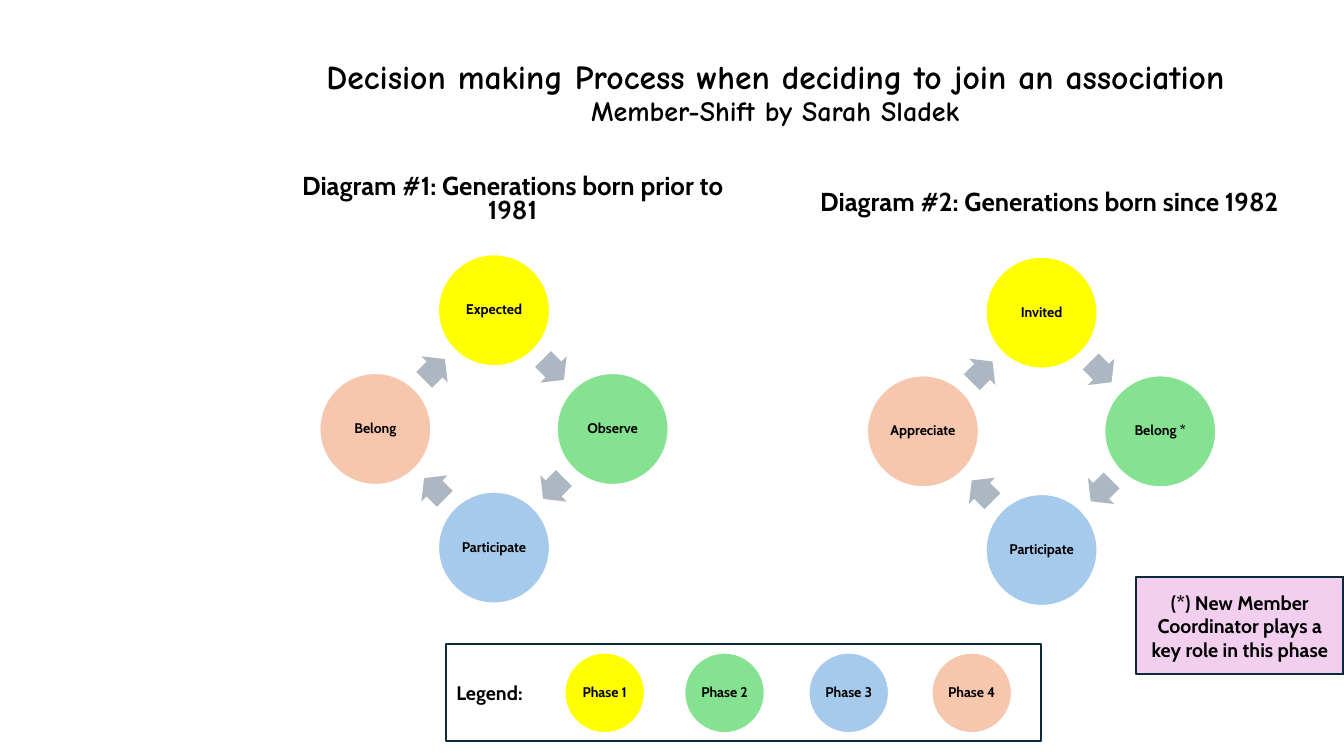
"""Build the slide comparing how two generations decide to join an association."""
import dataclasses
import math

import pptx
import pptx.dml.color
import pptx.enum.shapes
import pptx.enum.text
import pptx.util

Cm = pptx.util.Cm
Pt = pptx.util.Pt
SHAPE = pptx.enum.shapes.MSO_SHAPE
ALIGN = pptx.enum.text.PP_ALIGN
MIDDLE = pptx.enum.text.MSO_ANCHOR.MIDDLE
NO_FIT = pptx.enum.text.MSO_AUTO_SIZE.NONE


@dataclasses.dataclass(frozen=True)
class Theme:
    """Colours, fonts and type sizes of the slide."""
    title_font: str = "Comic Neue"
    body_font: str = "Cabin"
    title: float = 24
    subtitle: float = 20
    heading: float = 18.5
    note: float = 14
    label: float = 10
    outline: float = 1.5
    ink: str = "000000"
    paper: str = "FFFFFF"
    border: str = "092A39"
    arrow: str = "ACB7C1"
    pink: str = "F2CFEE"
    phases: tuple = ("FFFF00", "84E291", "A6CAEC", "F6C6AD")


def rgb(code):
    """Return the colour for a hex code."""
    return pptx.dml.color.RGBColor.from_string(code)


def assign(target, values):
    """Set every attribute in a dict of format values."""
    for name, value in values.items():
        setattr(target, name, value)


class Deck:
    """Hold the theme and current slide and draw elements on it."""

    def __init__(self, s, theme):
        """Keep the slide and the theme."""
        self.s = s
        self.theme = theme

    def text(self, sp, lines, font, inset=None, align=ALIGN.CENTER, spacing=None):
        """Write (text, size) lines as one paragraph with line breaks."""
        tf = sp.text_frame
        assign(tf, {"word_wrap": True, "auto_size": NO_FIT, "vertical_anchor": MIDDLE})
        if inset is not None:
            sides = ("left", "top", "right", "bottom")
            assign(tf, {f"margin_{side}": Cm(inset) for side in sides})
        p = tf.paragraphs[0]
        assign(p, {"alignment": align, "line_spacing": spacing, "space_before": Pt(0)})
        for i, (words, size) in enumerate(lines):
            if i:
                p.add_line_break()
            r = p.add_run()
            r.text = words
            assign(r.font, {"name": font, "size": Pt(size), "bold": True})
            r.font.color.rgb = rgb(self.theme.ink)

    def placeholder(self, idx, box, lines, font, spacing):
        """Move and fill a template placeholder."""
        sp = self.s.placeholders[idx]
        assign(sp, dict(zip(("left", "top", "width", "height"), map(Cm, box))))
        self.text(sp, lines, font, spacing=spacing)

    def shape(self, kind, box, fill, line=None, parent=None):
        """Add a filled preset shape, outlined if a line colour is given."""
        sp = (parent or self.s).shapes.add_shape(kind, *map(Cm, box))
        sp.shadow.inherit = False
        sp.fill.solid()
        sp.fill.fore_color.rgb = rgb(fill)
        if line:
            sp.line.color.rgb = rgb(line)
            sp.line.width = Pt(self.theme.outline)
        else:
            sp.line.fill.background()
        return sp

    def panel(self, box, fill, words, align):
        """Add a bordered rectangle with a note in it."""
        sp = self.shape(SHAPE.RECTANGLE, box, fill, self.theme.border)
        self.text(sp, [(words, self.theme.note)], self.theme.body_font, align=align)

    def phase(self, x, y, size, fill, words, parent=None):
        """Add a labelled circle centred on a point."""
        box = (x - size / 2, y - size / 2, size, size)
        sp = self.shape(SHAPE.OVAL, box, fill, self.theme.paper, parent)
        self.text(sp, [(words, self.theme.label)], self.theme.body_font, 0.03, spacing=0.9)

    def cycle(self, x, y, labels):
        """Add a ring of phases, clockwise from the top, with arrows between."""
        group = self.s.shapes.add_group_shape()
        ring, arrow_ring, size, length, breadth = 2.99, 2.12, 2.82, 0.74, 0.94
        step = 360 / len(labels)
        for i, (words, fill) in enumerate(zip(labels, self.theme.phases)):
            a = math.radians(i * step - 90)
            self.phase(x + ring * math.cos(a), y + ring * math.sin(a), size, fill, words, group)
            a += math.radians(step / 2)
            box = (x + arrow_ring * math.cos(a) - length / 2,
                   y + arrow_ring * math.sin(a) - breadth / 2, length, breadth)
            sp = self.shape(SHAPE.RIGHT_ARROW, box, self.theme.arrow, parent=group)
            sp.rotation = (i + 0.5) * step
            sp.adjustments[0], sp.adjustments[1] = 0.6, 0.5


def main():
    """Build and save the slide."""
    theme = Theme()
    prs = pptx.Presentation()
    assign(prs, {"slide_width": Cm(33.87), "slide_height": Cm(19.05)})
    s = prs.slides.add_slide(prs.slide_layouts[4])
    deck = Deck(s, theme)

    deck.placeholder(0, (5.72, 1.22, 27.64, 2.29), [
        ("Decision making Process when deciding to join an association", theme.title),
        ("Member-Shift by Sarah Sladek", theme.subtitle),
    ], theme.title_font, 0.9)
    headings = (
        (1, (7.06, 4.14, 11.71, 1.8), "Diagram #1: Generations born prior to 1981"),
        (3, (20.37, 4.32, 12.14, 1.63), "Diagram #2: Generations born since 1982"),
    )
    for idx, box, words in headings:
        deck.placeholder(idx, box, [(words, theme.heading)], theme.body_font, 0.8)
    for sp in list(s.placeholders):
        if not sp.text_frame.text:
            sp.element.getparent().remove(sp.element)

    deck.cycle(12.45, 10.81, ("Expected", "Observe", "Participate", "Belong"))
    deck.cycle(26.25, 10.87, ("Invited", "Belong *", "Participate", "Appreciate"))

    deck.panel((11.25, 16.23, 14.99, 2.44), theme.paper, "Legend:", ALIGN.LEFT)
    for i, (x, fill) in enumerate(zip((15.24, 18.26, 21.39, 24.49), theme.phases), 1):
        deck.phase(x, 17.46, 2.03, fill, f"Phase {i}")
    deck.panel((28.63, 14.55, 5.23, 2.44), theme.pink,
               "(*) New Member Coordinator plays a key role in this phase", ALIGN.CENTER)
    prs.save("out.pptx")


if __name__ == "__main__":
    main()
